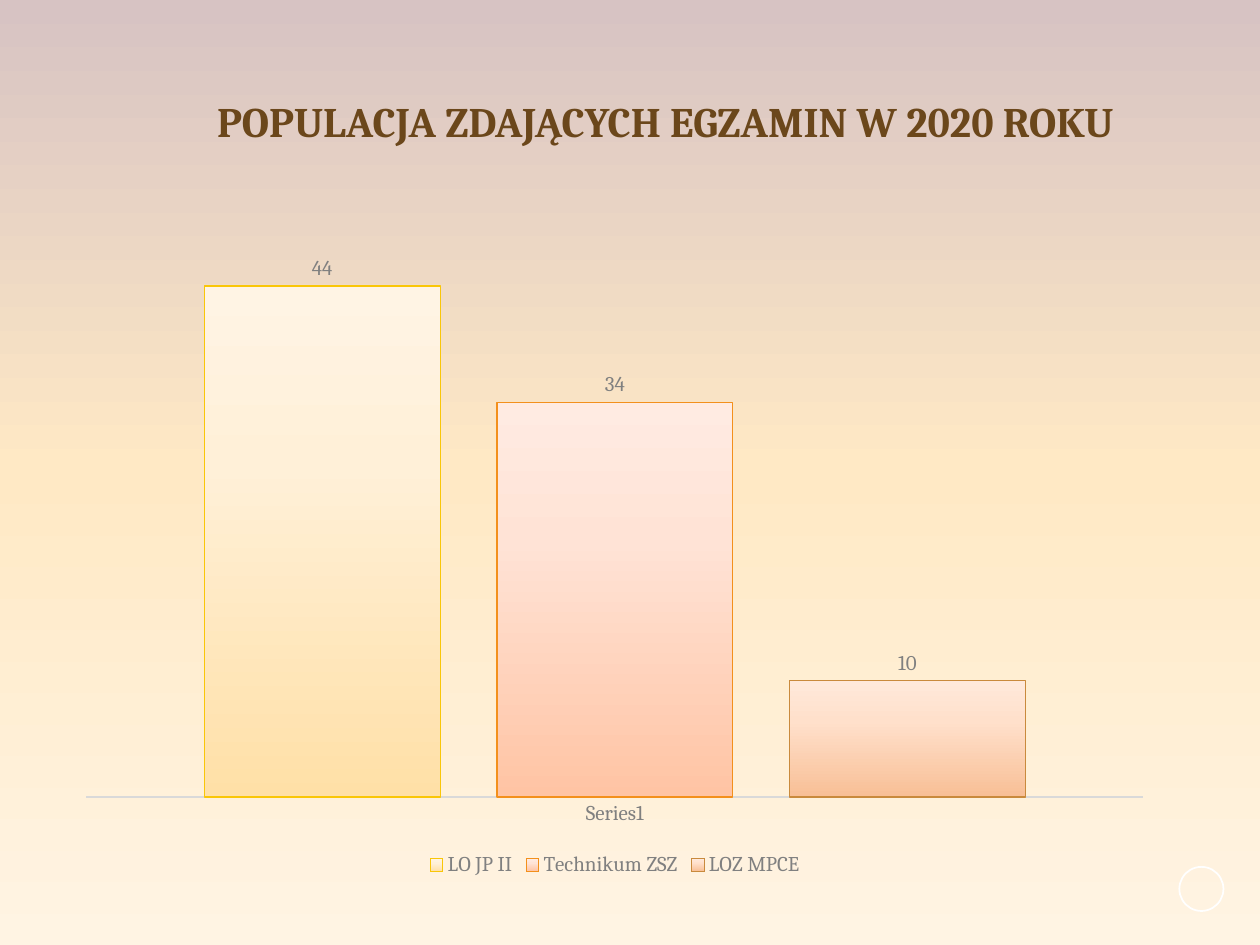
"""Builds the slide on the number of people sitting the exam in 2020."""
from dataclasses import dataclass

from lxml import etree
from pptx import Presentation
from pptx.chart.data import CategoryChartData
from pptx.dml.color import RGBColor
from pptx.enum.chart import XL_CHART_TYPE, XL_LABEL_POSITION, XL_LEGEND_POSITION, XL_TICK_MARK
from pptx.enum.shapes import MSO_SHAPE
from pptx.enum.text import MSO_ANCHOR, PP_ALIGN
from pptx.oxml.ns import qn
from pptx.util import Inches, Pt

COLUMNS = XL_CHART_TYPE.COLUMN_CLUSTERED
OUTSIDE_END = XL_LABEL_POSITION.OUTSIDE_END
LEGEND_BOTTOM = XL_LEGEND_POSITION.BOTTOM
NO_TICKS = XL_TICK_MARK.NONE
OVAL = MSO_SHAPE.OVAL
MIDDLE = MSO_ANCHOR.MIDDLE
CENTER = PP_ALIGN.CENTER

Stops = tuple[tuple[int, str], ...]


@dataclass(frozen=True)
class Theme:
    font: str = "Cambria"
    title: str = "6B471B"
    label: str = "808080"
    axis: str = "D9D9D9"
    ring: str = "FFFFFF"
    title_size: int = 24
    label_size: int = 12
    line_width: float = 0.75
    background: Stops = ((0, "D7C3C3"), (50, "FFE9C5"), (100, "FFF4E3"))


@dataclass(frozen=True)
class School:
    name: str
    candidates: int
    line: str
    stops: Stops


THEME = Theme()
SCHOOLS = (
    School("LO JP II", 44, "F9C608", ((0, "FFE0A7"), (65, "FFF0D8"), (100, "FFF4E4"))),
    School("Technikum ZSZ", 34, "F3901C", ((0, "FFC4A4"), (65, "FFE3D6"), (100, "FFEBE2"))),
    School("LOZ MPCE", 10, "C98A3D", ((0, "F8BF96"), (65, "FFE0CB"), (100, "FFE9DB"))),
)


def set_gradient(fill, owner, stops: Stops, angle: int) -> None:
    """Give the fill a linear gradient with any number of stops."""
    fill.gradient()
    fill.gradient_angle = angle
    stop_list = next(owner.iter(qn("a:gsLst")))
    for stop in list(stop_list):
        stop_list.remove(stop)
    for position, color in stops:
        stop = etree.SubElement(stop_list, qn("a:gs"), pos=str(position * 1000))
        etree.SubElement(stop, qn("a:srgbClr"), val=color)


def set_font(font, size: int, color: str, bold: bool = False) -> None:
    """Set the theme font with a size, colour and weight."""
    font.name = THEME.font
    font.size = Pt(size)
    font.bold = bold
    font.color.rgb = RGBColor.from_string(color)


def set_line(line, color: str, width: float) -> None:
    """Draw a solid line."""
    line.color.rgb = RGBColor.from_string(color)
    line.width = Pt(width)


def add_title(page, text: str) -> None:
    """Add the centred slide title."""
    box = page.shapes.add_textbox(Inches(0.78), Inches(0.36), Inches(9), Inches(1.25))
    box.text_frame.word_wrap = True
    box.text_frame.vertical_anchor = MIDDLE
    para = box.text_frame.paragraphs[0]
    para.text = text
    para.alignment = CENTER
    para.line_spacing = 0.9
    set_font(para.font, THEME.title_size, THEME.title, bold=True)


def add_ring(page) -> None:
    """Add the empty ring in the bottom right corner."""
    ring = page.shapes.add_shape(OVAL, Inches(9.36), Inches(6.88), Inches(0.35), Inches(0.35))
    ring.shadow.inherit = False
    ring.fill.background()
    set_line(ring.line, THEME.ring, 1)


def add_school_chart(page, schools: tuple[School, ...]) -> None:
    """Add the column chart with one series per school."""
    data = CategoryChartData()
    data.categories = ["Series1"]
    for school in schools:
        data.add_series(school.name, [school.candidates])
    chart = page.shapes.add_chart(
        COLUMNS, Inches(0.51), Inches(1.61), Inches(8.74), Inches(5.39), data
    ).chart
    set_font(chart.font, THEME.label_size, THEME.label)
    chart.has_title = False
    chart.has_legend = True
    chart.legend.position = LEGEND_BOTTOM
    chart.legend.include_in_layout = False
    set_font(chart.legend.font, THEME.label_size, THEME.label)

    chart.value_axis.visible = False
    chart.value_axis.has_major_gridlines = False
    chart.value_axis.minimum_scale = 0
    chart.value_axis.maximum_scale = 50
    chart.category_axis.major_tick_mark = NO_TICKS
    set_font(chart.category_axis.tick_labels.font, THEME.label_size, THEME.label)
    set_line(chart.category_axis.format.line, THEME.axis, THEME.line_width)

    plot = chart.plots[0]
    plot.vary_by_categories = False
    plot.gap_width = 100
    plot.overlap = -24
    for series, school in zip(plot.series, schools):
        set_gradient(series.format.fill, series._element, school.stops, 90)
        set_line(series.format.line, school.line, THEME.line_width)
        labels = series.data_labels
        labels.show_value = True
        labels.position = OUTSIDE_END
        set_font(labels.font, THEME.label_size, THEME.label)


def main() -> None:
    """Build and save the deck."""
    deck = Presentation()
    deck.slide_width = Inches(10)
    deck.slide_height = Inches(7.5)
    page = deck.slides.add_slide(deck.slide_layouts[6])
    set_gradient(page.background.fill, page.element, THEME.background, 270)
    add_ring(page)
    add_title(page, "POPULACJA ZDAJĄCYCH EGZAMIN W 2020 ROKU")
    add_school_chart(page, SCHOOLS)
    deck.save("out.pptx")


if __name__ == "__main__":
    main()
